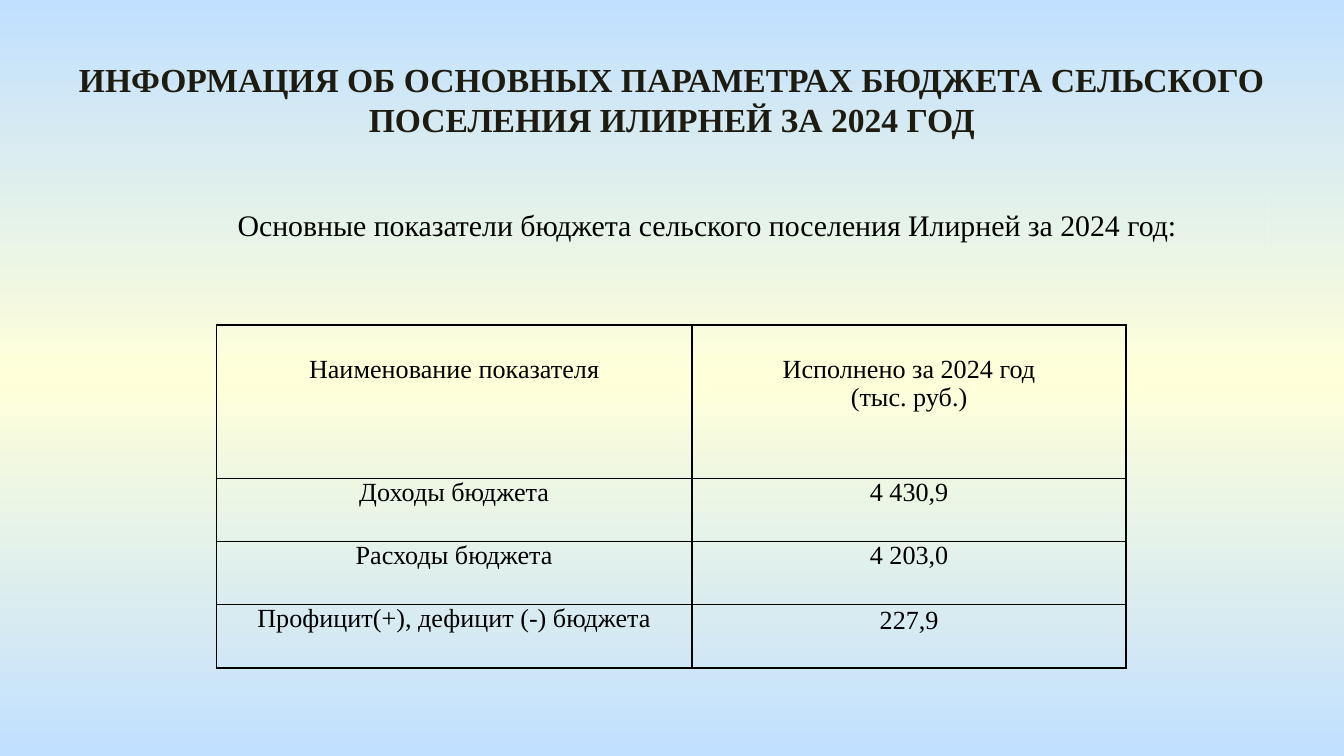
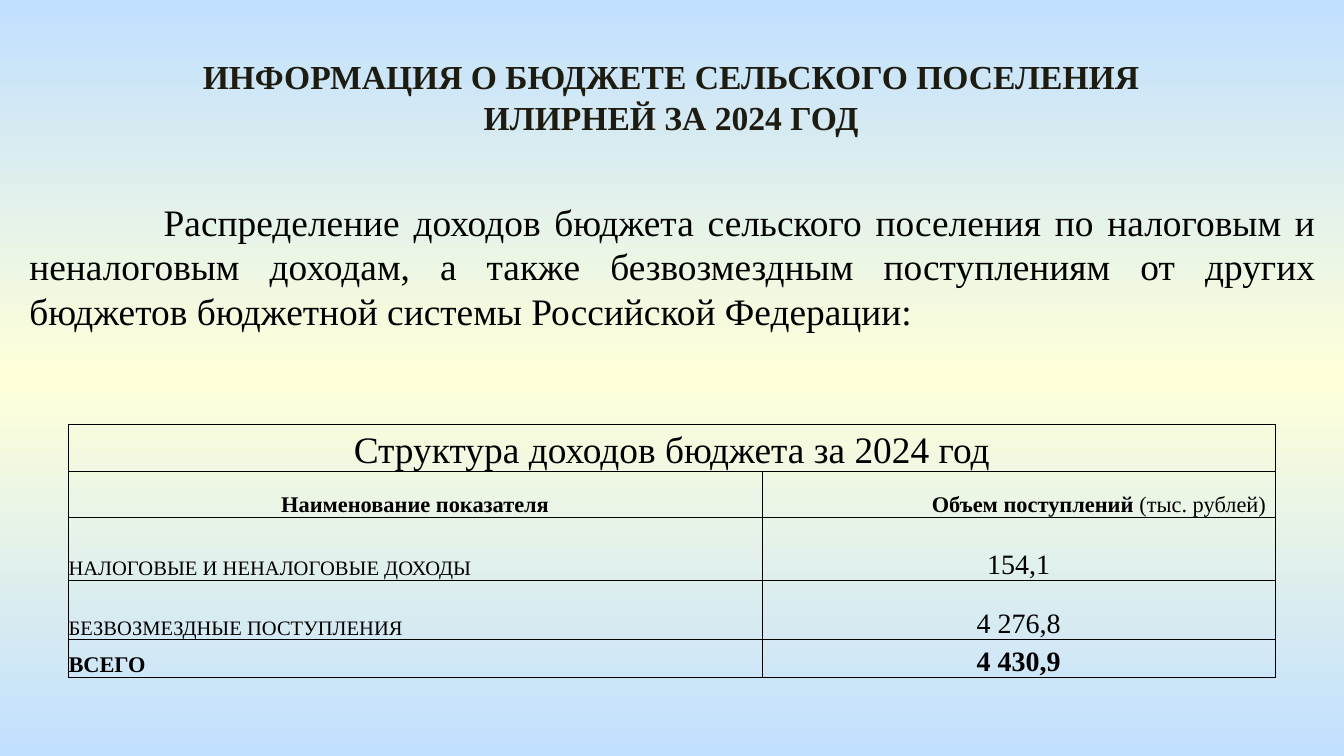
from copy import deepcopy

from lxml.etree import SubElement
from pptx import Presentation
from pptx.dml.color import RGBColor
from pptx.enum.shapes import MSO_SHAPE
from pptx.enum.text import MSO_ANCHOR, PP_ALIGN
from pptx.oxml.ns import qn
from pptx.util import Inches, Pt

COLORS = {"sky": "C1E0FF", "cream": "FFFFD9", "title": "1E1C11", "text": "000000"}
FONT = "Times New Roman"
LEFT, CENTER, RIGHT = PP_ALIGN.LEFT, PP_ALIGN.CENTER, PP_ALIGN.RIGHT
NO_INSETS = (0, 0, 0, 0)


def rgb(name):
    return RGBColor.from_string(COLORS[name])


def style_paragraph(para, size, color="text", bold=False, align=LEFT):
    para.alignment = align
    para.font.name = FONT
    para.font.size = Pt(size)
    para.font.bold = bold
    para.font.color.rgb = rgb(color)


def add_page(deck):
    """Blank page on a vertical sky-cream-sky gradient."""
    page = deck.slides.add_slide(deck.slide_layouts[6])
    fill = page.background.fill
    fill.gradient()
    fill.gradient_angle = 270
    stop_list = page.background._cSld.find(".//" + qn("a:gsLst"))
    stop_list.append(deepcopy(stop_list[-1]))
    stops = ((0, "sky"), (0.5, "cream"), (1, "sky"))
    for stop, (position, color) in zip(fill.gradient_stops, stops):
        stop.position = position
        stop.color.rgb = rgb(color)
    return page


def add_title(page, left, top, width, text):
    box = page.shapes.add_textbox(Inches(left), Inches(top), Inches(width), Inches(0.71))
    box.text_frame.word_wrap = True
    para = box.text_frame.paragraphs[0]
    para.text = text
    style_paragraph(para, 18, "title", True, CENTER)


def add_intro(page, left, top, width, height, text, size, align, spacing=1.0):
    """Indented paragraph in a rectangle that takes on the page background."""
    box = page.shapes.add_shape(MSO_SHAPE.RECTANGLE, Inches(left), Inches(top),
                                Inches(width), Inches(height))
    box.shadow.inherit = False
    box.line.fill.background()
    box._element.remove(box._element.find(qn("p:style")))
    box._element.set("useBgFill", "1")
    box.text_frame.word_wrap = True
    box.text_frame.vertical_anchor = MSO_ANCHOR.TOP
    para = box.text_frame.paragraphs[0]
    para.text = text
    para.line_spacing = spacing
    style_paragraph(para, size, align=align)
    para._p.get_or_add_pPr().set("indent", str(Inches(1)))


def set_borders(cell, width):
    properties = cell._tc.get_or_add_tcPr()
    for side in ("lnL", "lnR", "lnT", "lnB"):
        line = SubElement(properties, qn("a:" + side), w=str(Pt(width)))
        fill = SubElement(line, qn("a:solidFill"))
        SubElement(fill, qn("a:srgbClr"), val=COLORS["text"])


def add_table(page, left, top, columns, rows, border):
    frame = page.shapes.add_table(len(rows), len(columns), Inches(left), Inches(top),
                                  Inches(sum(columns)), Inches(sum(rows)))
    table = frame.table
    table.first_row = table.horz_banding = False
    for column, width in zip(table.columns, columns):
        column.width = Inches(width)
    for row, height in zip(table.rows, rows):
        row.height = Inches(height)
    for cell in table.iter_cells():
        set_borders(cell, border)
        cell.fill.background()
    return table


def write_cell(cell, text, size, align=CENTER, bold=False, insets=NO_INSETS,
               anchor=MSO_ANCHOR.TOP):
    cell.margin_left, cell.margin_top, cell.margin_right, cell.margin_bottom = map(
        Inches, insets)
    cell.vertical_anchor = anchor
    cell.text = text
    for para in cell.text_frame.paragraphs:
        style_paragraph(para, size, bold=bold, align=align)


def build_parameters(deck):
    page = add_page(deck)
    add_intro(page, 0.67, 1.46, 8.74, 0.4,
              "Основные показатели бюджета сельского поселения Илирней за 2024 год:",
              16, LEFT, 1.12)
    add_title(page, 0.35, 0.39, 9.3,
              "ИНФОРМАЦИЯ ОБ ОСНОВНЫХ ПАРАМЕТРАХ БЮДЖЕТА СЕЛЬСКОГО "
              "ПОСЕЛЕНИЯ ИЛИРНЕЙ ЗА 2024 ГОД")
    rows = (
        ("Наименование показателя", "Исполнено за 2024 год\n(тыс. руб.)"),
        ("Доходы бюджета", "4 430,9"),
        ("Расходы бюджета", "4 203,0"),
        ("Профицит(+), дефицит (-) бюджета", "227,9"),
    )
    table = add_table(page, 1.61, 2.42, (3.54, 3.23), (1.14, 0.47, 0.47, 0.47), 1)
    for row_index, row in enumerate(rows):
        # The header text starts one line lower
        insets = (0.07, 0 if row_index else 0.22, 0.07, 0)
        for column_index, text in enumerate(row):
            write_cell(table.cell(row_index, column_index), text, 14, insets=insets)
    result = table.cell(3, 1)
    result.margin_left = result.margin_top = result.margin_right = Inches(0.01)


def build_income(deck):
    page = add_page(deck)
    add_intro(page, 0.12, 1.43, 9.77, 1.11,
              "Распределение доходов бюджета сельского поселения по налоговым и "
              "неналоговым доходам, а также безвозмездным поступлениям от других "
              "бюджетов бюджетной системы Российской Федерации:",
              20, PP_ALIGN.JUSTIFY)
    add_title(page, 1.13, 0.37, 7.73,
              "ИНФОРМАЦИЯ О БЮДЖЕТЕ СЕЛЬСКОГО ПОСЕЛЕНИЯ ИЛИРНЕЙ ЗА 2024 ГОД")
    table = add_table(page, 0.51, 3.16, (5.16, 3.82), (0.35, 0.34, 0.47, 0.44, 0.28), 0.5)
    bottom = MSO_ANCHOR.BOTTOM

    # Heading rows
    table.cell(0, 0).merge(table.cell(0, 1))
    write_cell(table.cell(0, 0), "Структура доходов бюджета за 2024 год", 20, anchor=bottom)
    write_cell(table.cell(1, 0), "Наименование показателя", 12, bold=True, anchor=bottom)
    volume = table.cell(1, 1)
    write_cell(volume, "Объем поступлений ", 12, RIGHT, True, (0.07, 0, 0.07, 0), bottom)
    unit = volume.text_frame.paragraphs[0].add_run()
    unit.text = "(тыс. рублей)"
    unit.font.bold = False

    # Income rows
    incomes = (
        ("НАЛОГОВЫЕ И НЕНАЛОГОВЫЕ ДОХОДЫ", "154,1", 11, False),
        ("БЕЗВОЗМЕЗДНЫЕ ПОСТУПЛЕНИЯ", "4 276,8", 11, False),
        ("ВСЕГО", "4 430,9", 12, True),
    )
    for row_index, (name, amount, size, bold) in enumerate(incomes, start=2):
        write_cell(table.cell(row_index, 0), name, size, LEFT, bold, anchor=bottom)
        write_cell(table.cell(row_index, 1), amount, 15, bold=bold, anchor=bottom)


def main():
    deck = Presentation()
    # Widescreen, 16:9
    deck.slide_width = Inches(10)
    deck.slide_height = deck.slide_width * 9 // 16
    build_parameters(deck)
    build_income(deck)
    deck.save("out.pptx")


if __name__ == "__main__":
    main()
